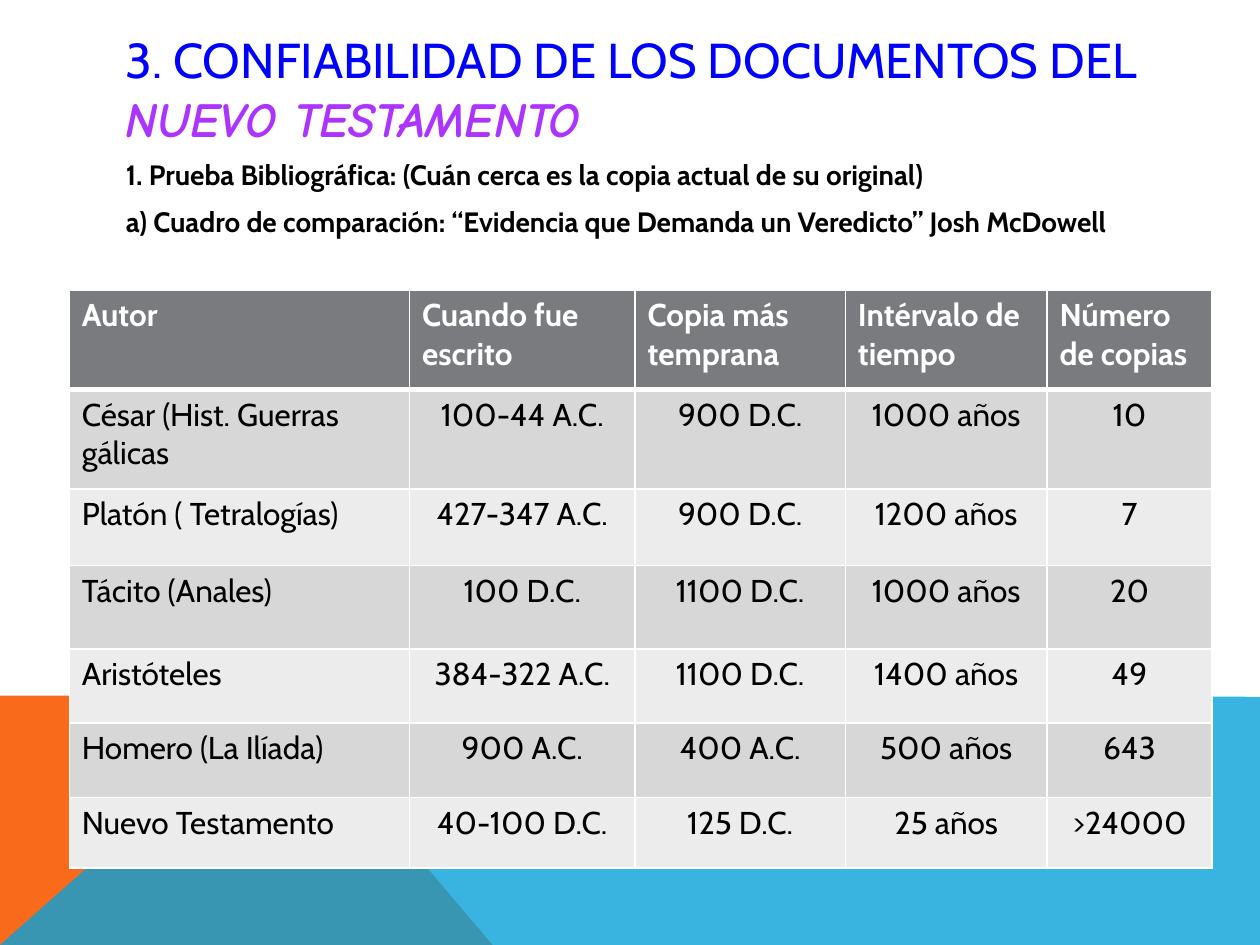
from lxml import etree
from pptx import Presentation
from pptx.dml.color import RGBColor
from pptx.enum import text as t
from pptx.oxml import ns
from pptx.util import Inches, Pt

WHITE = RGBColor(0xFF, 0xFF, 0xFF)
BLACK = RGBColor(0, 0, 0)
BLUE = RGBColor(0, 0, 0xFF)
PURPLE = RGBColor(0xAB, 0x34, 0xFF)
ORANGE = RGBColor(0xF9, 0x6A, 0x1B)
SKY = RGBColor(0x08, 0xA1, 0xD9)
GRAY = RGBColor(0x79, 0x7B, 0x7E)
BANDS = [RGBColor(0xEC, 0xEC, 0xEC), RGBColor(0xD7, 0xD7, 0xD8)]

TITLE = [
    ("3. CONFIABILIDAD DE LOS DOCUMENTOS DEL ", "Cabin", BLUE, False),
    ("NUEVO TESTAMENTO", "Comic Neue", PURPLE, True),
]
BODY = [
    "1. Prueba Bibliográfica: (Cuán cerca es la copia actual de su original)",
    "a) Cuadro de comparación: “Evidencia que Demanda un Veredicto” Josh McDowell",
]
ROWS = [
    ("Autor", "Cuando fue escrito", "Copia más temprana", "Intérvalo de tiempo", "Número de copias"),
    ("César (Hist. Guerras gálicas", "100-44 A.C.", "900 D.C.", "1000 años", "10"),
    ("Platón ( Tetralogías)", "427-347 A.C.", "900 D.C.", "1200 años", "7"),
    ("Tácito (Anales)", "100 D.C.", "1100 D.C.", "1000 años", "20"),
    ("Aristóteles", "384-322 A.C.", "1100 D.C.", "1400 años", "49"),
    ("Homero (La Ilíada)", "900 A.C.", "400 A.C.", "500 años", "643"),
    ("Nuevo Testamento", "40-100 D.C.", "125 D.C.", "25 años", ">24000"),
]
WIDTHS = [2.7, 1.79, 1.67, 1.6, 1.31]
HEIGHTS = [0.79, 0.79, 0.61, 0.66, 0.59, 0.59, 0.56]
WEDGES = [
    ([(0, 7.5), (0, 5.52), (2.23, 5.52), (3.91, 7.5)], ORANGE, 100),
    ([(0, 7.5), (2.23, 5.52), (10, 5.53), (10, 7.5)], SKY, 80),
]


def style(run, size, color, bold, font="Cabin"):
    f = run.font
    f.name, f.size, f.bold = font, Pt(size), bold
    f.color.rgb = color


def add_wedge(slide, points, color, alpha):
    pts = [(Inches(x), Inches(y)) for x, y in points]
    form = slide.shapes.build_freeform(*pts[0])
    form.add_line_segments(pts[1:], close=True)
    shape = form.convert_to_shape()
    shape.shadow.inherit = False
    shape.fill.solid()
    shape.fill.fore_color.rgb = color
    shape.line.fill.background()
    if alpha < 100:
        clr = shape._element.spPr.find(ns.qn("a:solidFill"))[0]
        etree.SubElement(clr, ns.qn("a:alpha")).set("val", str(alpha * 1000))


def add_box(slide, top, height, anchor):
    box = slide.shapes.add_textbox(Inches(0.9), Inches(top), Inches(8.22), Inches(height))
    frame = box.text_frame
    frame.word_wrap = True
    frame.vertical_anchor = anchor
    return frame


def add_edges(cell, row):
    props = cell._tc.get_or_add_tcPr()
    thick = {"T": row == 1, "B": row == 0}
    for i, side in enumerate("LRTB"):
        line = etree.Element(ns.qn("a:ln" + side))
        line.set("w", str(Pt(3 if thick.get(side) else 1)))
        fill = etree.SubElement(line, ns.qn("a:solidFill"))
        etree.SubElement(fill, ns.qn("a:srgbClr")).set("val", str(WHITE))
        props.insert(i, line)


def add_grid(slide):
    table = slide.shapes.add_table(
        len(ROWS), len(WIDTHS), Inches(0.55), Inches(2.3),
        Inches(sum(WIDTHS)), Inches(sum(HEIGHTS))).table
    for col, width in zip(table.columns, WIDTHS):
        col.width = Inches(width)
    for r, row in enumerate(ROWS):
        table.rows[r].height = Inches(HEIGHTS[r])
        for c, value in enumerate(row):
            cell = table.cell(r, c)
            cell.fill.solid()
            cell.fill.fore_color.rgb = BANDS[r % 2] if r else GRAY
            add_edges(cell, r)
            para = cell.text_frame.paragraphs[0]
            para.text = value
            if r and c:
                para.alignment = t.PP_ALIGN.CENTER
            style(para.runs[0], 18, BLACK if r else WHITE, r == 0)


def main():
    deck = Presentation()
    deck.slide_width, deck.slide_height = Inches(10), Inches(7.5)
    slide = deck.slides.add_slide(deck.slide_layouts[6])
    for wedge in WEDGES:
        add_wedge(slide, *wedge)

    title = add_box(slide, 0.4, 0.6, t.MSO_ANCHOR.MIDDLE)
    for words, font, color, strong in TITLE:
        run = title.paragraphs[0].add_run()
        run.text = words
        style(run, 28, color, strong, font)
        run.font.italic = strong

    body = add_box(slide, 1.2, 3.91, t.MSO_ANCHOR.TOP)
    body.text = "\n".join(BODY)
    for para in body.paragraphs:
        para.space_before = Pt(8)
        props = para._p.get_or_add_pPr()
        props.set("marL", str(Inches(0.38)))
        props.set("indent", str(Inches(-0.38)))
        style(para.runs[0], 16, BLACK, True)

    add_grid(slide)
    deck.save("out.pptx")


if __name__ == "__main__":
    main()
